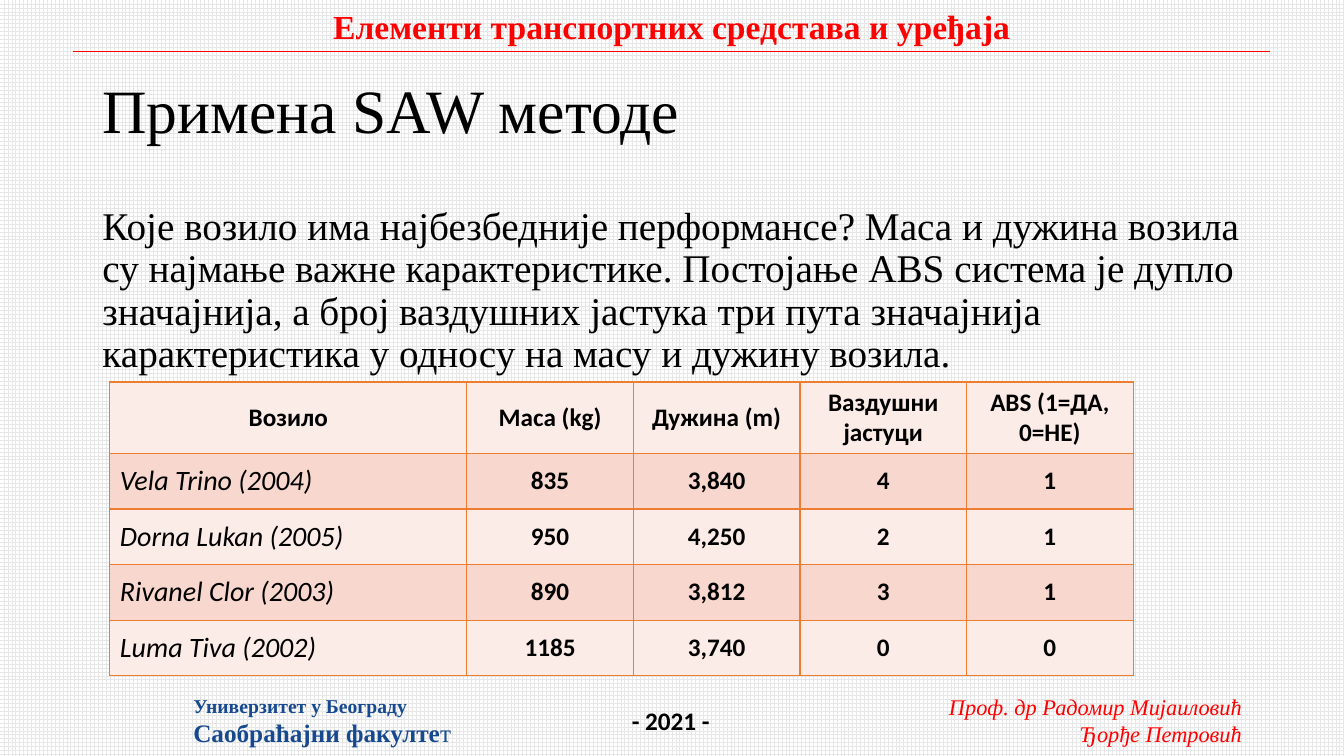
from lxml import etree
from pptx import Presentation
from pptx.dml.color import RGBColor
from pptx.enum.dml import MSO_PATTERN
from pptx.enum.shapes import MSO_CONNECTOR
from pptx.enum.text import MSO_ANCHOR, MSO_AUTO_SIZE, PP_ALIGN
from pptx.oxml.ns import qn
from pptx.util import Pt

LEFT, CENTER, RIGHT = PP_ALIGN.LEFT, PP_ALIGN.CENTER, PP_ALIGN.RIGHT
TOP, MIDDLE = MSO_ANCHOR.TOP, MSO_ANCHOR.MIDDLE
FIXED, GROW = MSO_AUTO_SIZE.NONE, MSO_AUTO_SIZE.SHAPE_TO_FIT_TEXT
LARGE_GRID = MSO_PATTERN.LARGE_GRID
STRAIGHT = MSO_CONNECTOR.STRAIGHT

BLACK = RGBColor(0x00, 0x00, 0x00)
WHITE = RGBColor(0xFF, 0xFF, 0xFF)
GRID_GRAY = RGBColor(0xE7, 0xE6, 0xE6)
RED = RGBColor(0xFF, 0x00, 0x00)
BLUE = RGBColor(0x16, 0x49, 0x8E)
ORANGE = RGBColor(0xED, 0x7D, 0x31)
LIGHT_BAND = RGBColor(0xFC, 0xEC, 0xE8)
DARK_BAND = RGBColor(0xF8, 0xD7, 0xCE)

SERIF, SANS = "Times New Roman", "Calibri"

QUESTION = (
    "Које возило има најбезбедније перформансе? Маса и дужина возила су најмање "
    "важне карактеристике. Постојање ABS система је дупло значајнија, а број "
    "ваздушних јастука три пута значајнија карактеристика у односу на масу и "
    "дужину возила."
)
VEHICLES = [
    ["Возило", "Маса (kg)", "Дужина (m)", "Ваздушни јастуци", "ABS (1=ДА, 0=НЕ)"],
    ["Vela Trino (2004)", "835", "3,840", "4", "1"],
    ["Dorna Lukan (2005)", "950", "4,250", "2", "1"],
    ["Rivanel Clor (2003)", "890", "3,812", "3", "1"],
    ["Luma Tiva (2002)", "1185", "3,740", "0", "0"],
]


def add_span(para, text, size=18, font=SERIF, color=BLACK, bold=False, italic=False):
    span = para.add_run()
    span.text = text
    span.font.size = Pt(size)
    span.font.name = font
    span.font.color.rgb = color
    span.font.bold = bold
    span.font.italic = italic


def paint_background(page):
    fill = page.background.fill
    fill.patterned()
    fill.pattern = LARGE_GRID
    fill.fore_color.rgb = GRID_GRAY
    fill.back_color.rgb = WHITE


def add_label(page, left, top, width, height, lines, align=LEFT):
    box = page.shapes.add_textbox(Pt(left), Pt(top), Pt(width), Pt(height))
    frame = box.text_frame
    frame.word_wrap = False
    frame.auto_size = GROW
    for number, spans in enumerate(lines):
        para = frame.add_paragraph() if number else frame.paragraphs[0]
        para.alignment = align
        for text, style in spans:
            add_span(para, text, **style)


def add_rule(page, left, right, height):
    rule = page.shapes.add_connector(STRAIGHT, Pt(left), Pt(height), Pt(right), Pt(height))
    rule.line.color.rgb = RED
    rule.line.width = Pt(0.5)
    etree.SubElement(rule._element.spPr, qn("a:effectLst"))


def fill_placeholder(holder, left, top, width, height, text, size, anchor):
    holder.left, holder.top = Pt(left), Pt(top)
    holder.width, holder.height = Pt(width), Pt(height)
    frame = holder.text_frame
    frame.word_wrap = True
    frame.auto_size = FIXED
    frame.vertical_anchor = anchor
    para = frame.paragraphs[0]
    para.alignment = LEFT
    para.line_spacing = 0.9
    para.space_before = Pt(0)
    properties = para._p.get_or_add_pPr()
    properties.set("marL", "0")
    properties.set("indent", "0")
    etree.SubElement(properties, qn("a:buNone"))
    add_span(para, text, size=size)


def border_cell(cell, color, width):
    properties = cell._tc.get_or_add_tcPr()
    for side in ("a:lnL", "a:lnR", "a:lnT", "a:lnB"):
        line = etree.SubElement(properties, qn(side), w=str(Pt(width)))
        solid = etree.SubElement(line, qn("a:solidFill"))
        etree.SubElement(solid, qn("a:srgbClr"), val=str(color))


def add_vehicle_table(page, left, top, widths, heights):
    frame = page.shapes.add_table(
        len(heights), len(widths), Pt(left), Pt(top), Pt(sum(widths)), Pt(sum(heights))
    )
    table = frame.table
    table.first_row = False
    table.horz_banding = False
    for column, width in zip(table.columns, widths):
        column.width = Pt(width)
    for row, height in zip(table.rows, heights):
        row.height = Pt(height)
    for r, values in enumerate(VEHICLES):
        for c, value in enumerate(values):
            is_name = r > 0 and c == 0
            cell = table.cell(r, c)
            border_cell(cell, ORANGE, 1)
            cell.fill.solid()
            cell.fill.fore_color.rgb = DARK_BAND if r % 2 else LIGHT_BAND
            cell.vertical_anchor = MIDDLE
            para = cell.text_frame.paragraphs[0]
            para.alignment = LEFT if is_name else CENTER
            add_span(para, value, size=20 if is_name else 18, font=SANS,
                     bold=not is_name, italic=is_name)


def main():
    deck = Presentation()
    deck.slide_width, deck.slide_height = Pt(960), Pt(540)
    page = deck.slides.add_slide(deck.slide_layouts[1])
    paint_background(page)

    author = dict(size=16, color=RED, italic=True)
    school = dict(color=BLUE, bold=True)
    add_label(page, 663.8, 491.8, 230.4, 46,
              [[("Проф. др Радомир Мијаиловић", author)], [("Ђорђе Петровић", author)]],
              align=RIGHT)
    add_rule(page, 52, 907, 36.7)
    add_label(page, 228.2, 0.7, 503.3, 36,
              [[("Елементи транспортних средстава и уређаја",
                 dict(size=24, color=RED, bold=True))]], align=CENTER)
    add_label(page, 444.2, 500.4, 70.6, 29, [[("- 2021 -", dict(font=SANS, bold=True))]])
    add_label(page, 131, 491.8, 200.9, 46,
              [[("Универзитет у Београду", dict(school, size=14))],
               [("Саобраћајни факулте", school), ("т", dict(color=BLUE))]])

    fill_placeholder(page.shapes.title, 66, 28.8, 828, 104.4,
                     "Примена SAW методе", 44, MIDDLE)
    fill_placeholder(page.placeholders[1], 66, 144, 828, 342.7, QUESTION, 28, TOP)
    add_vehicle_table(page, 78.5, 272.9, [254.9] + [119] * 4, [51] + [39.7] * 4)
    deck.save("out.pptx")


if __name__ == "__main__":
    main()
